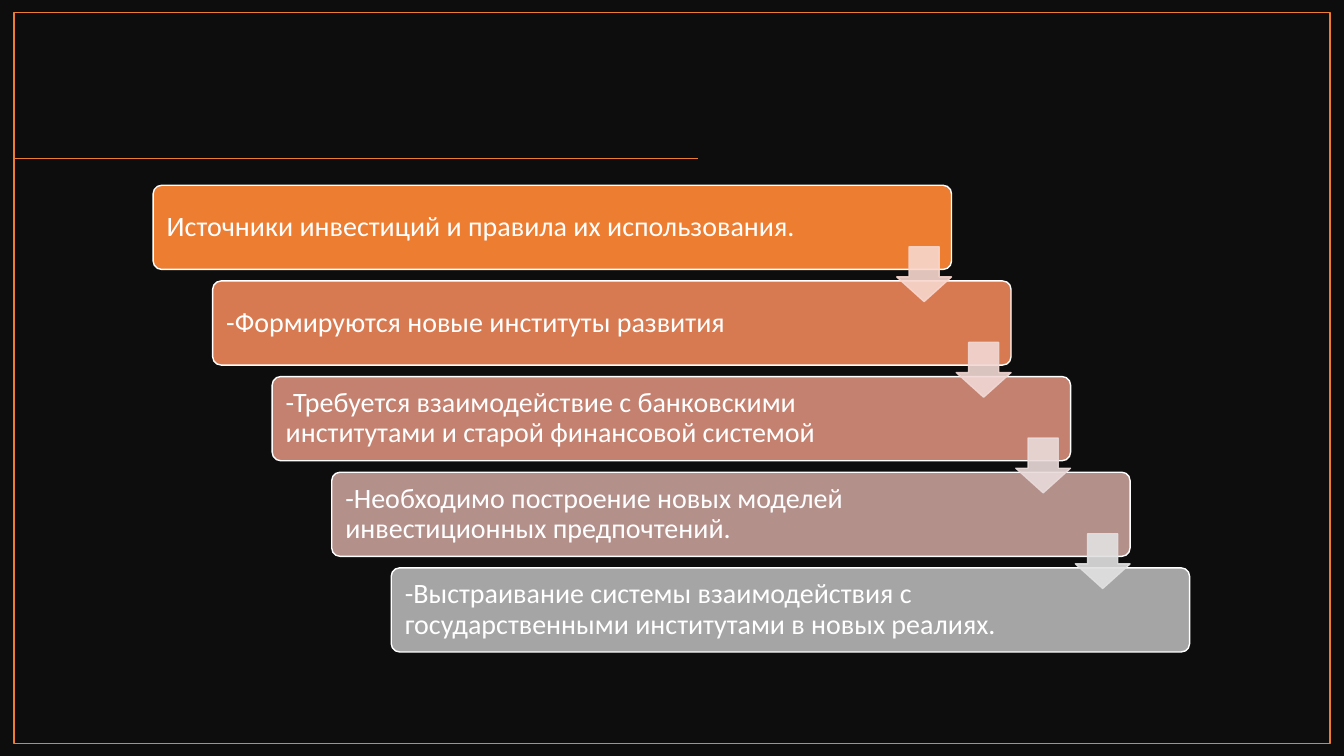
from dataclasses import dataclass

from lxml import etree
from pptx import Presentation
from pptx.dml.color import RGBColor
from pptx.enum.shapes import MSO_CONNECTOR, MSO_SHAPE
from pptx.enum.text import MSO_ANCHOR, PP_ALIGN
from pptx.oxml.ns import qn
from pptx.shapes.autoshape import Shape
from pptx.slide import Slide
from pptx.util import Cm, Pt

RECT = MSO_SHAPE.RECTANGLE
ROUNDED = MSO_SHAPE.ROUNDED_RECTANGLE
DOWN_ARROW = MSO_SHAPE.DOWN_ARROW
STRAIGHT = MSO_CONNECTOR.STRAIGHT
MIDDLE = MSO_ANCHOR.MIDDLE
LEFT = PP_ALIGN.LEFT


@dataclass(frozen=True)
class Theme:
    background: str = "0D0D0D"
    accent: str = "ED7D31"
    light: str = "FFFFFF"
    font: str = "Calibri"
    text_size: int = 20
    line_width: int = 1
    arrow_opacity: int = 90


@dataclass(frozen=True)
class Step:
    text: str
    fill: str
    arrow: str = ""  # colour of the arrow to the next step


THEME = Theme()
STEPS = [
    Step("Источники инвестиций и правила их использования.", "ED7D31", "F8D7CE"),
    Step("-Формируются новые институты развития", "D87A51", "F1D8D4"),
    Step("-Требуется взаимодействие с банковскими институтами и старой "
         "финансовой системой", "C48170", "E9DBDA"),
    Step("-Необходимо построение новых моделей инвестиционных предпочтений.",
         "B4908B", "E1E1E1"),
    Step("-Выстраивание системы взаимодействия с государственными институтами "
         "в новых реалиях.", "A5A5A5"),
]

# Staircase layout, in centimetres
SLIDE_W, SLIDE_H = 33.87, 19.05
CARD_X, CARD_Y, CARD_W, CARD_H = 3.86, 4.67, 20.12, 2.12
ARROW_X, ARROW_Y, ARROW_SIZE = 22.6, 6.22, 1.38
STEP_X, STEP_Y = 1.5, 2.41


def add_box(s: Slide, kind: MSO_SHAPE, x: float, y: float, w: float, h: float,
            fill: str = "", line: str = "") -> Shape:
    """Add a preset shape; an empty colour means no fill or no line."""
    sp = s.shapes.add_shape(kind, Cm(x), Cm(y), Cm(w), Cm(h))
    sp.shadow.inherit = False
    if fill:
        sp.fill.solid()
        sp.fill.fore_color.rgb = RGBColor.from_string(fill)
    else:
        sp.fill.background()
    if line:
        sp.line.color.rgb = RGBColor.from_string(line)
        sp.line.width = Pt(THEME.line_width)
    else:
        sp.line.fill.background()
    return sp


def add_rule(s: Slide, x1: float, x2: float, y: float) -> None:
    rule = s.shapes.add_connector(STRAIGHT, Cm(x1), Cm(y), Cm(x2), Cm(y))
    rule.line.color.rgb = RGBColor.from_string(THEME.accent)
    rule.line.width = Pt(THEME.line_width)
    etree.SubElement(rule._element.spPr, qn("a:effectLst"))


def add_card(s: Slide, step: Step, x: float, y: float) -> None:
    sp = add_box(s, ROUNDED, x, y, CARD_W, CARD_H, step.fill, THEME.light)
    sp.adjustments[0] = 0.1
    tf = sp.text_frame
    tf.word_wrap = True
    tf.vertical_anchor = MIDDLE
    tf.margin_left, tf.margin_right = Cm(0.28), Cm(3.1)
    tf.margin_top = tf.margin_bottom = Cm(0.2)
    p = tf.paragraphs[0]
    p.alignment = LEFT
    p.line_spacing = 0.9
    r = p.add_run()
    r.text = step.text
    r.font.name = THEME.font
    r.font.size = Pt(THEME.text_size)
    r.font.color.rgb = RGBColor.from_string(THEME.light)


def add_arrow(s: Slide, color: str, x: float, y: float) -> None:
    sp = add_box(s, DOWN_ARROW, x, y, ARROW_SIZE, ARROW_SIZE, color, color)
    sp.adjustments[0], sp.adjustments[1] = 0.55, 0.45
    # Transparency of both fill and line
    for clr in sp._element.spPr.iter(qn("a:srgbClr")):
        etree.SubElement(clr, qn("a:alpha"), val=str(THEME.arrow_opacity * 1000))


def main() -> None:
    prs = Presentation()
    prs.slide_width, prs.slide_height = Cm(SLIDE_W), Cm(SLIDE_H)
    s = prs.slides.add_slide(prs.slide_layouts[6])

    # Dark backdrop, title rule and frame
    add_box(s, RECT, 0, 0, SLIDE_W, SLIDE_H, fill=THEME.background)
    add_rule(s, 0.35, 17.6, 4)
    add_box(s, RECT, 0.35, 0.32, 33.17, 18.42, line=THEME.accent)

    # Staircase of cards, then the arrows on top
    for i, step in enumerate(STEPS):
        add_card(s, step, CARD_X + i * STEP_X, CARD_Y + i * STEP_Y)
    for i, step in enumerate(STEPS[:-1]):
        add_arrow(s, step.arrow, ARROW_X + i * STEP_X, ARROW_Y + i * STEP_Y)

    prs.save("out.pptx")


if __name__ == "__main__":
    main()
